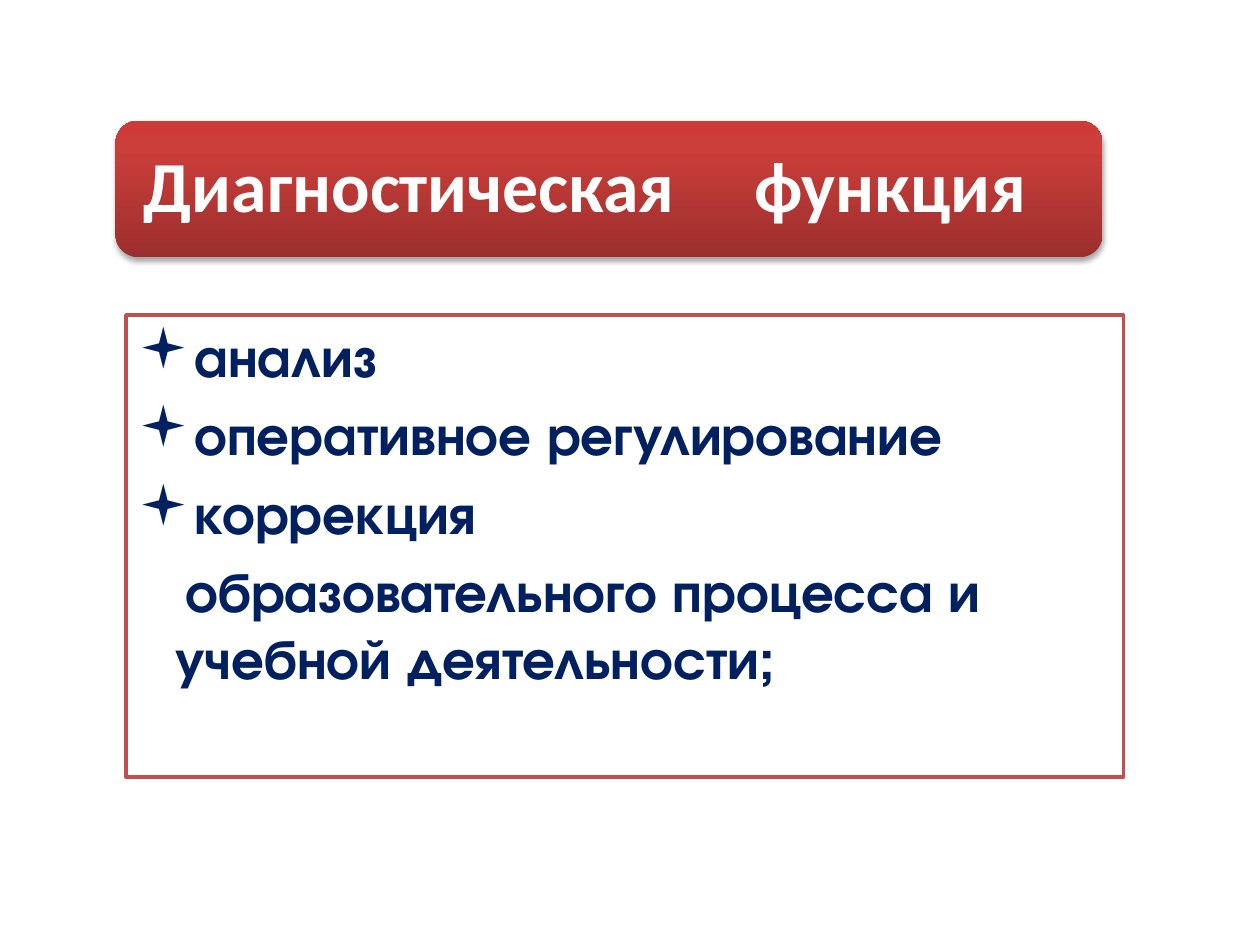
from copy import deepcopy

from lxml import etree
from pptx import Presentation
from pptx.dml.color import RGBColor
from pptx.enum.shapes import MSO_SHAPE
from pptx.enum.text import MSO_ANCHOR, PP_ALIGN
from pptx.oxml.ns import qn
from pptx.util import Pt

RECT, ROUND = MSO_SHAPE.RECTANGLE, MSO_SHAPE.ROUNDED_RECTANGLE
TOP, MIDDLE = MSO_ANCHOR.TOP, MSO_ANCHOR.MIDDLE
LEFT = PP_ALIGN.LEFT

COLORS = {"paper": "FFFFFF", "frame": "C0504D", "navy": "002060",
          "dark": "9C2F2D", "mid": "CB3E3A", "light": "CE3B37",
          "shade": "000000"}
STOPS = [(0, "dark"), (0.8, "mid"), (1, "light")]
ITEMS = [("анализ", 27, -27, "▪"),
         ("оперативное регулирование", 27, -27, "▪"),
         ("коррекция", 21, -21, "▪"),
         ("образовательного процесса и учебной деятельности;", 21, 6, None)]


def rgb(name):
    """Return the named colour."""
    return RGBColor.from_string(COLORS[name])


def add(parent, tag, **attrs):
    """Append a drawing element with the given attributes."""
    node = etree.SubElement(parent, qn(tag))
    for key, value in attrs.items():
        node.set(key, str(value))
    return node


def style(para, face, size, color):
    """Set a bold, left-aligned font on a paragraph."""
    para.alignment = LEFT
    font = para.font
    font.name, font.size, font.bold = face, Pt(size), True
    font.color.rgb = rgb(color)


def shade(shape):
    """Give a shape its gradient and soft shadow."""
    shape.fill.gradient()
    shape.fill.gradient_angle = 90
    props = shape._element.spPr
    stops = props.find(qn("a:gradFill")).find(qn("a:gsLst"))
    stops.append(deepcopy(stops[-1]))
    for stop, (place, color) in zip(shape.fill.gradient_stops, STOPS):
        stop.position = place
        stop.color.rgb = rgb(color)
    shape.shadow.inherit = False
    drop = add(props.find(qn("a:effectLst")), "a:outerShdw",
               blurRad=Pt(3.1), dist=Pt(1.8), dir=90 * 60000, rotWithShape=0)
    tint = add(drop, "a:srgbClr", val=COLORS["shade"])
    add(tint, "a:alpha", val=35000)


def banner(slide, x, y, w, h):
    """Place the title on its rounded red plate."""
    group = slide.shapes.add_group_shape()
    plate = group.shapes.add_shape(ROUND, Pt(x), Pt(y), Pt(w), Pt(h))
    shade(plate)
    plate.line.fill.background()
    pad = 3.75
    box = group.shapes.add_textbox(Pt(x + pad), Pt(y + pad),
                                   Pt(w - 2 * pad), Pt(h - 2 * pad))
    frame = box.text_frame
    frame.word_wrap, frame.vertical_anchor = True, MIDDLE
    frame.margin_left = frame.margin_right = Pt(12.3)
    frame.margin_top = frame.margin_bottom = Pt(12.3)
    para = frame.paragraphs[0]
    para.text = "Диагностическая\tфункция"
    para.line_spacing = 0.9
    tabs = add(para._p.get_or_add_pPr(), "a:tabLst")
    add(tabs, "a:tab", pos=Pt(349), algn="l")
    style(para, "Calibri", 41, "paper")


def points(slide, x, y, w, h):
    """Place the framed list of tasks."""
    box = slide.shapes.add_shape(RECT, Pt(x), Pt(y), Pt(w), Pt(h))
    box.shadow.inherit = False
    box.fill.solid()
    box.fill.fore_color.rgb = rgb("paper")
    box.line.color.rgb = rgb("frame")
    box.line.width = Pt(2)
    frame = box.text_frame
    frame.word_wrap, frame.vertical_anchor = True, TOP
    for i, (text, margin, indent, mark) in enumerate(ITEMS):
        para = frame.add_paragraph() if i else frame.paragraphs[0]
        para.text = text
        para.space_before = Pt(6.4 if i else 0)
        props = para._p.get_or_add_pPr()
        props.set("marL", str(Pt(margin)))
        props.set("indent", str(Pt(indent)))
        if mark:
            add(props, "a:buFont", typeface="Wingdings")
            add(props, "a:buChar", char=mark)
        else:
            add(props, "a:buNone")
        style(para, "TeX Gyre Adventor", 32, "navy")


def main():
    """Build and save the slide."""
    deck = Presentation()
    deck.slide_width, deck.slide_height = Pt(720), Pt(540)
    slide = deck.slides.add_slide(deck.slide_layouts[6])
    points(slide, 72, 180, 570, 264)
    banner(slide, 66, 69, 564, 78)
    deck.save("out.pptx")


if __name__ == "__main__":
    main()
